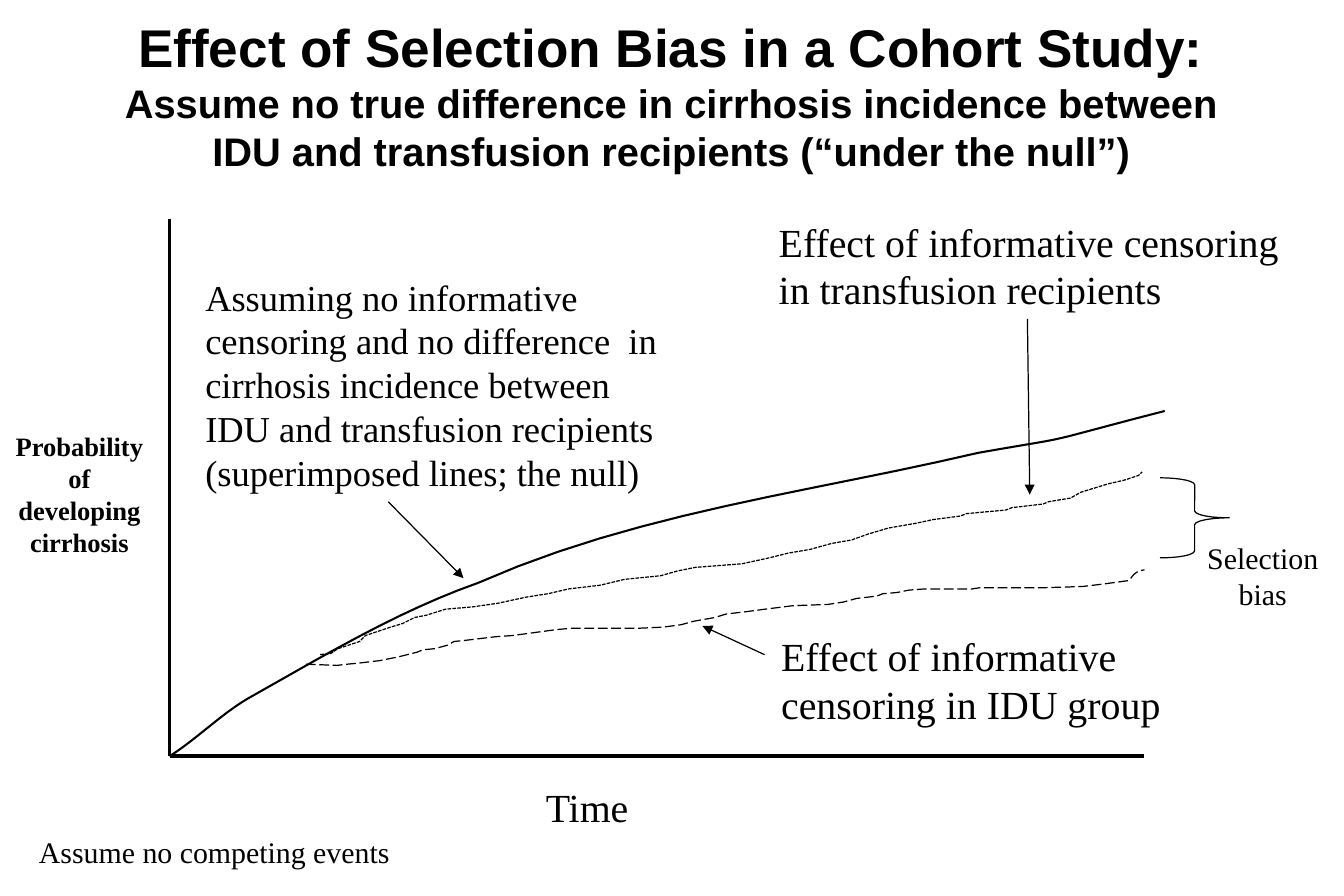
import dataclasses

import lxml.etree
import pptx
import pptx.dml.color
import pptx.enum.dml
import pptx.enum.shapes
import pptx.enum.text
import pptx.oxml.ns
import pptx.util

Inches = pptx.util.Inches
Align = pptx.enum.text.PP_ALIGN
Anchor = pptx.enum.text.MSO_ANCHOR
Dash = pptx.enum.dml.MSO_LINE
Preset = pptx.enum.shapes.MSO_SHAPE


@dataclasses.dataclass(frozen=True)
class Theme:
    """Colours, fonts, type sizes and line widths of the slide."""
    ink = pptx.dml.color.RGBColor(0, 0, 0)
    paper = pptx.dml.color.RGBColor(255, 255, 255)
    heading_font: str = "Arial"
    body_font: str = "Times New Roman"
    title: int = 32
    label: int = 24
    null_note: int = 22
    small: int = 18
    axis_name: int = 16
    thin: float = 0.75
    curve: float = 1.25
    vertical_axis: float = 2.25
    time_axis: float = 2.5


@dataclasses.dataclass(frozen=True)
class Box:
    """A region of the slide in inches."""
    left: float
    top: float
    width: float
    height: float

    def inner(self, x, y, width, height):
        """Return a box placed relative to this one."""
        return Box(self.left + x, self.top + y, width, height)

    def lengths(self):
        """Return the box as slide lengths."""
        return [Inches(n) for n in (self.left, self.top, self.width, self.height)]


THEME = Theme()

NULL_CONTROLS = [
    (0, 0), (0.22, 0.14), (0.43, 0.35), (0.65, 0.48), (1.29, 0.84),
    (1.9, 1.21), (2.58, 1.45), (3.91, 2.04), (5.37, 2.21), (6.77, 2.54),
    (7.69, 2.7), (7.17, 2.59), (8.33, 2.89)]

IDU_CURVE = [
    (1.14, 0.77), (1.4, 0.76), (1.49, 0.77), (1.59, 0.78), (1.76, 0.8),
    (1.91, 0.83), (2.07, 0.87), (2.12, 0.89), (2.22, 0.9), (2.33, 0.93),
    (2.38, 0.96), (2.48, 0.97), (2.73, 1), (2.87, 1.01), (3.02, 1.03),
    (3.24, 1.06), (3.36, 1.07), (3.91, 1.07), (4.13, 1.08), (4.28, 1.1),
    (4.39, 1.13), (4.56, 1.16), (4.66, 1.19), (4.83, 1.21), (4.98, 1.23),
    (5.22, 1.26), (5.51, 1.27), (5.64, 1.29), (5.75, 1.32), (5.92, 1.34),
    (5.97, 1.36), (6.09, 1.37), (6.19, 1.39), (6.32, 1.4), (6.72, 1.4),
    (6.78, 1.41), (7.31, 1.41), (7.64, 1.42), (7.81, 1.44), (8.03, 1.47),
    (8.07, 1.52), (8.11, 1.55), (8.16, 1.56)]

TRANSFUSION_CURVE = [
    (1.26, 0.85), (1.35, 0.86), (1.41, 0.9), (1.59, 0.96), (1.64, 1.01),
    (1.7, 1.03), (1.85, 1.08), (1.95, 1.11), (2.05, 1.16), (2.15, 1.18),
    (2.31, 1.23), (2.54, 1.25), (2.75, 1.28), (2.98, 1.33), (3.17, 1.36),
    (3.34, 1.4), (3.6, 1.43), (3.81, 1.48), (4.11, 1.51), (4.25, 1.55),
    (4.4, 1.58), (4.79, 1.61), (5.02, 1.66), (5.18, 1.7), (5.36, 1.73),
    (5.54, 1.78), (5.71, 1.81), (5.85, 1.86), (6.02, 1.91), (6.25, 1.95),
    (6.39, 1.98), (6.62, 2.01), (6.67, 2.03), (7, 2.06), (7.05, 2.08),
    (7.31, 2.11), (7.36, 2.13), (7.54, 2.16), (7.63, 2.21), (7.86, 2.28),
    (7.99, 2.31), (8.11, 2.35), (8.14, 2.38)]


def smooth_points(controls, steps=12):
    """Sample a chain of cubic Bézier segments."""
    points = [controls[0]]
    for first in range(0, len(controls) - 1, 3):
        a, b, c, d = controls[first:first + 4]
        for step in range(1, steps + 1):
            t = step / steps
            weights = ((1 - t) ** 3, 3 * t * (1 - t) ** 2, 3 * t * t * (1 - t), t ** 3)
            points.append(tuple(
                sum(w * p[axis] for w, p in zip(weights, (a, b, c, d)))
                for axis in (0, 1)))
    return points


def write(slide, box, text, size, align=Align.LEFT, font=THEME.body_font,
          bold=False, anchor=Anchor.TOP):
    """Add wrapped text in the box and return its frame."""
    frame = slide.shapes.add_textbox(*box.lengths()).text_frame
    frame.word_wrap = True
    frame.vertical_anchor = anchor
    paragraph = frame.paragraphs[0]
    paragraph.text = text
    paragraph.alignment = align
    for run in paragraph.runs:
        run.font.size = pptx.util.Pt(size)
        run.font.name = font
        run.font.bold = bold
        run.font.color.rgb = THEME.ink
    return frame


def ink_line(shape, width):
    """Give a shape a plain line of the given width."""
    shape.line.color.rgb = THEME.ink
    shape.line.width = pptx.util.Pt(width)


def draw_line(slide, box, start, end, width, arrow=False):
    """Draw a line between two points relative to the box."""
    ends = [Inches(n) for x, y in (start, end) for n in (box.left + x, box.top + y)]
    line = slide.shapes.add_connector(pptx.enum.shapes.MSO_CONNECTOR.STRAIGHT, *ends)
    ink_line(line, width)
    properties = line.element.spPr
    qn = pptx.oxml.ns.qn
    if arrow:
        lxml.etree.SubElement(properties.find(qn("a:ln")), qn("a:tailEnd"), type="triangle")
    lxml.etree.SubElement(properties, qn("a:effectLst"))


def draw_curve(slide, box, points, width, dash=None):
    """Draw a curve whose points rise from the lower left corner of the box."""
    places = [(Inches(box.left + time), Inches(box.top + box.height - rise))
              for time, rise in points]
    builder = slide.shapes.build_freeform(*places[0])
    builder.add_line_segments(places[1:], close=False)
    curve = builder.convert_to_shape()
    curve.shadow.inherit = False
    curve.fill.background()
    ink_line(curve, width)
    if dash:
        curve.line.dash_style = dash


def heading(slide, box):
    """Write the title and its assumption."""
    frame = write(
        slide, box,
        "Effect of Selection Bias in a Cohort Study:\v"
        "Assume no true difference in cirrhosis incidence between IDU and "
        "transfusion recipients (“under the null”)",
        THEME.label, Align.CENTER, THEME.heading_font, True, Anchor.MIDDLE)
    frame.paragraphs[0].runs[0].font.size = pptx.util.Pt(THEME.title)


def incidence_plot(slide, box):
    """Draw the axes, their names and the three incidence curves."""
    origin = (0, box.height)
    draw_line(slide, box, (0, 0), origin, THEME.vertical_axis)
    draw_line(slide, box, origin, (box.width, box.height), THEME.time_axis)
    write(slide, box.inner(-1.42, 1.67, 1.33, 1.27),
          "Probability of developing cirrhosis", THEME.axis_name,
          Align.CENTER, bold=True, anchor=Anchor.MIDDLE)
    write(slide, box.inner(2.41, 4.67, 2.17, 0.5), "Time", THEME.label, Align.CENTER)
    draw_curve(slide, box, smooth_points(NULL_CONTROLS), THEME.curve)
    draw_curve(slide, box, IDU_CURVE, THEME.thin, Dash.LONG_DASH)
    draw_curve(slide, box, TRANSFUSION_CURVE, THEME.thin, Dash.SQUARE_DOT)


def callout(slide, box, text, size, start, end):
    """Write a note with an arrow to its curve."""
    write(slide, box, text, size)
    draw_line(slide, box, start, end, THEME.thin, arrow=True)


def selection_bias(slide, box):
    """Bracket the gap between the two censored curves."""
    brace = slide.shapes.add_shape(Preset.RIGHT_BRACE, *box.inner(0, 0, 0.58, 0.67).lengths())
    brace.adjustments[0] = 0.1
    brace.shadow.inherit = False
    brace.fill.solid()
    brace.fill.fore_color.rgb = THEME.paper
    ink_line(brace, THEME.thin)
    write(slide, box.inner(0.17, 0.47, 1.38, 0.7), "Selection bias", THEME.small, Align.CENTER)


def main():
    """Build the slide and save it."""
    deck = pptx.Presentation()
    deck.slide_width, deck.slide_height = Inches(11.25), Inches(7.5)
    slide = deck.slides.add_slide(deck.slide_layouts[6])
    heading(slide, Box(0.84, 0.5, 9.56, 0.58))
    incidence_plot(slide, Box(1.42, 1.83, 8.16, 4.5))
    callout(slide, Box(1.62, 2.25, 4.08, 1.95),
            "Assuming no informative censoring and no difference  in cirrhosis incidence "
            "between IDU and transfusion recipients (superimposed lines; the null)",
            THEME.null_note, (1.63, 1.95), (2.26, 2.59))
    callout(slide, Box(6.44, 5.24, 3.75, 0.9), "Effect of informative censoring in IDU group",
            THEME.label, (-0.04, 0.24), (-0.56, 0))
    callout(slide, Box(6.42, 1.77, 4.42, 0.9),
            "Effect of informative censoring in transfusion recipients",
            THEME.label, (2.18, 0.9), (2.2, 2.37))
    selection_bias(slide, Box(9.71, 4, 1.55, 1.17))
    write(slide, Box(-0.04, 6.93, 3.67, 0.4), "Assume no competing events",
          THEME.small, Align.CENTER)
    deck.save("out.pptx")


if __name__ == "__main__":
    main()
